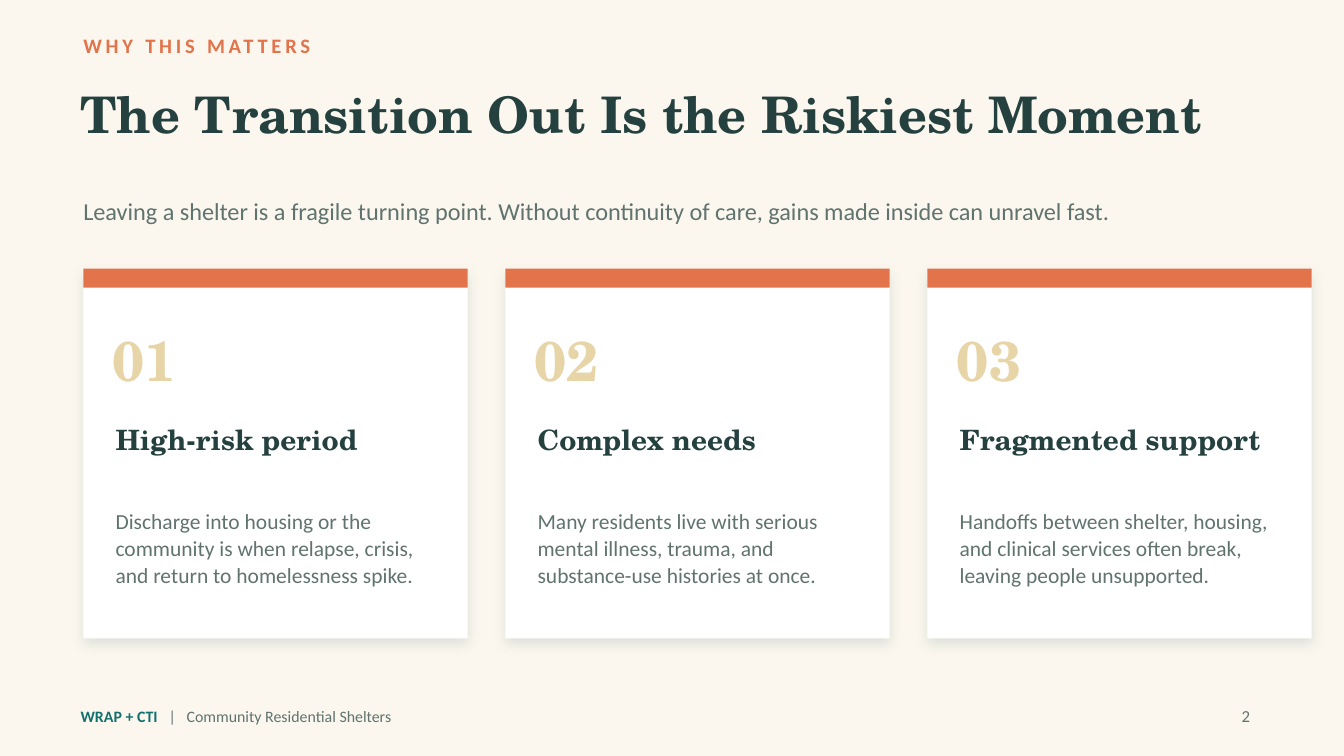
import pptx
import pptx.util
import pptx.dml.color
import pptx.enum.shapes
import pptx.enum.text
import pptx.oxml
import pptx.oxml.ns

Inches = pptx.util.Inches
Pt = pptx.util.Pt

SANS, SERIF = "Calibri", "TeX Gyre Schola"
CREAM, WHITE, ORANGE, SAND = "FBF7EE", "FFFFFF", "E2734A", "E7D5A8"
DARK, GREY, TEAL, SHADOW = "24413F", "60736F", "12706E", "0E4F4F"

EYEBROW = "WHY THIS MATTERS"
TITLE = "The Transition Out Is the Riskiest Moment"
LEAD = ("Leaving a shelter is a fragile turning point. Without continuity of care, "
        "gains made inside can unravel fast.")
CARDS = [
    ("High-risk period",
     "Discharge into housing or the community is when relapse, crisis, "
     "and return to homelessness spike."),
    ("Complex needs",
     "Many residents live with serious mental illness, trauma, and "
     "substance-use histories at once."),
    ("Fragmented support",
     "Handoffs between shelter, housing, and clinical services often break, "
     "leaving people unsupported."),
]
BRAND, SECTION = "WRAP + CTI", "Community Residential Shelters"
PAGE = "2"

SLIDE_W = 10
SLIDE_H = SLIDE_W * 9 / 16
LEFT, TOP, CARD_W, CARD_H, GAP = 0.62, 2, 2.86, 2.75, 0.28
BAR_H, PAD = 0.14, 0.24


def color(value):
    return pptx.dml.color.RGBColor.from_string(value)


def add_run(p, text, size=11, font=SANS, fill=GREY, bold=False, spacing=0):
    r = p.add_run()
    r.text = text
    r.font.size = Pt(size)
    r.font.name = font
    r.font.bold = bold
    r.font.color.rgb = color(fill)
    if spacing:
        r.font._element.set("spc", str(round(spacing * 100)))


def add_box(x, y, w, h, inset=0, align=None, line=None):
    tf = s.shapes.add_textbox(Inches(x), Inches(y), Inches(w), Inches(h)).text_frame
    tf.word_wrap = True
    tf.vertical_anchor = pptx.enum.text.MSO_ANCHOR.MIDDLE
    tf.margin_left = tf.margin_right = Inches(inset)
    tf.margin_top = tf.margin_bottom = 0
    p = tf.paragraphs[0]
    p.alignment = align
    p.line_spacing = line
    return p


def add_text(x, y, w, h, text, inset=0, align=None, line=None, **style):
    add_run(add_box(x, y, w, h, inset, align, line), text, **style)


def add_rect(x, y, w, h, fill):
    sp = s.shapes.add_shape(pptx.enum.shapes.MSO_SHAPE.RECTANGLE,
                            Inches(x), Inches(y), Inches(w), Inches(h))
    sp.shadow.inherit = False
    sp.fill.solid()
    sp.fill.fore_color.rgb = color(fill)
    sp.line.fill.background()
    return sp


def add_shadow(sp):
    effects = sp._element.spPr.find(pptx.oxml.ns.qn("a:effectLst"))
    effects.append(pptx.oxml.parse_xml(
        f'<a:outerShdw {pptx.oxml.ns.nsdecls("a")} blurRad="{Pt(7)}" dist="{Pt(3)}" '
        f'dir="5400000" algn="bl" rotWithShape="0"><a:srgbClr val="{SHADOW}">'
        '<a:alpha val="12000"/></a:srgbClr></a:outerShdw>'))


def add_card(i, heading, body):
    x = LEFT + i * (CARD_W + GAP)
    inner_x, inner_w = x + PAD, CARD_W - 2 * PAD
    add_shadow(add_rect(x, TOP, CARD_W, CARD_H, WHITE))
    add_rect(x, TOP, CARD_W, BAR_H, ORANGE)
    add_text(inner_x - 0.02, TOP + 0.32, 1, 0.7, f"{i + 1:02d}",
             size=30, font=SERIF, fill=SAND, bold=True)
    add_text(inner_x, TOP + 1.02, inner_w, 0.5, heading,
             size=15, font=SERIF, fill=DARK, bold=True)
    add_text(inner_x, TOP + 1.52, inner_w, 1.1, body, size=11.5, line=1.05)


prs = pptx.Presentation()
prs.slide_width, prs.slide_height = Inches(SLIDE_W), Inches(SLIDE_H)
s = prs.slides.add_slide(prs.slide_layouts[6])
s.background.fill.solid()
s.background.fill.fore_color.rgb = color(CREAM)

add_text(LEFT, 0.2, 8, 0.28, EYEBROW, fill=ORANGE, bold=True, spacing=2)
add_text(0.6, 0.42, 8.8, 0.85, TITLE, size=27, font=SERIF, fill=DARK, bold=True)
add_text(LEFT, 1.32, 8.8, 0.5, LEAD, size=13)

for i, (heading, body) in enumerate(CARDS):
    add_card(i, heading, body)

p = add_box(0.6, 5.18, 7, 0.3)
add_run(p, BRAND, size=8.5, fill=TEAL, bold=True)
for text, spacing in [(" ", 3.84), ("|", 0), (" ", 3.84), (SECTION, 0)]:
    add_run(p, text, size=8.5, spacing=spacing)
add_text(9, 5.18, 0.4, 0.3, PAGE, inset=0.1, size=9,
         align=pptx.enum.text.PP_ALIGN.RIGHT)

prs.save("out.pptx")
